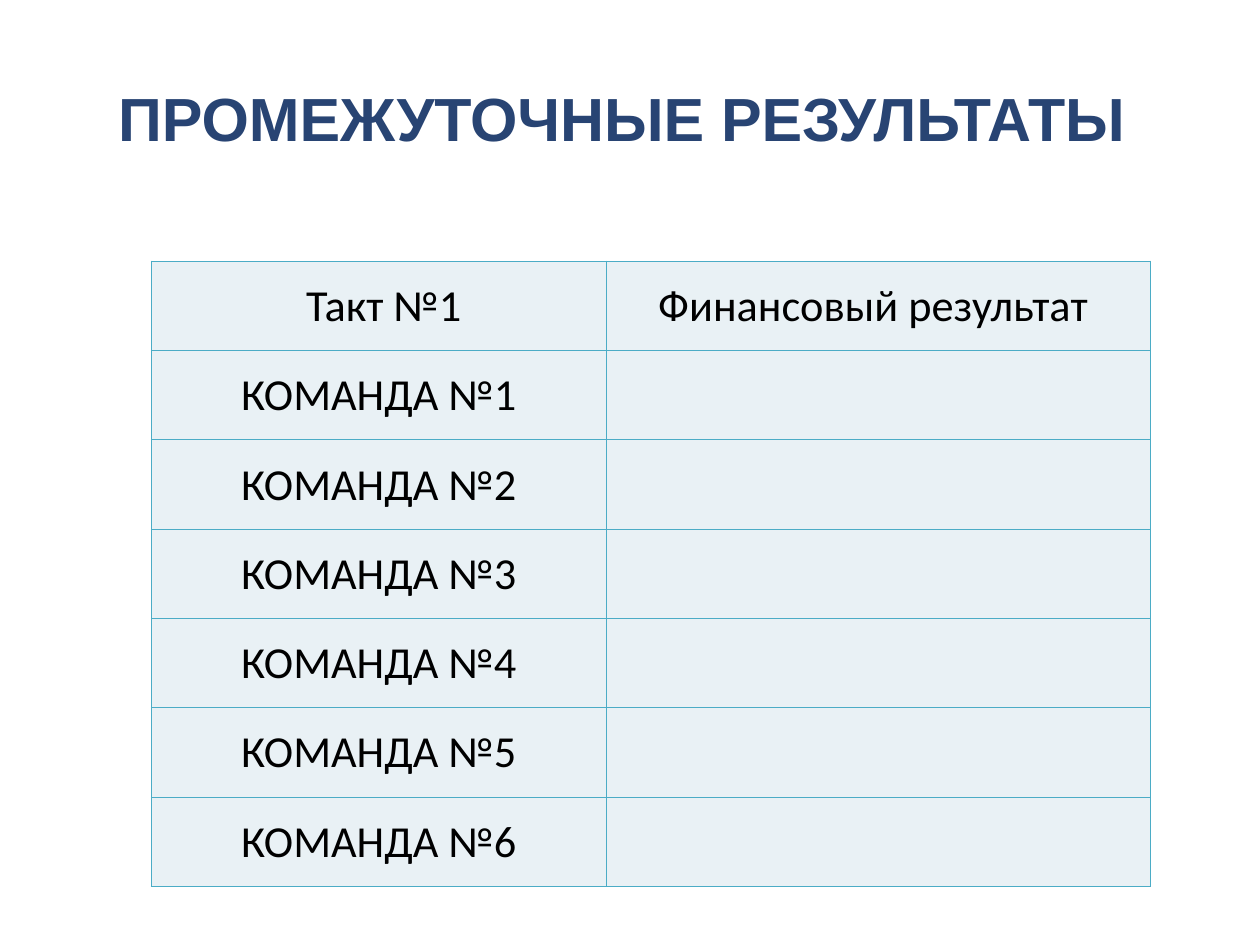
import pptx
import pptx.util
import pptx.dml.color
import pptx.enum.text
import pptx.oxml.ns
import lxml.etree

Inches = pptx.util.Inches
Pt = pptx.util.Pt
RGB = pptx.dml.color.RGBColor.from_string
qn = pptx.oxml.ns.qn
MIDDLE = pptx.enum.text.MSO_ANCHOR.MIDDLE
CENTER = pptx.enum.text.PP_ALIGN.CENTER
COLORS = {"title": "284473", "text": "000000", "fill": "E9F1F5", "line": "4BACC6"}


def write(frame, text, size=36, font="Calibri", color="text", bold=False):
    para = frame.paragraphs[0]
    para.alignment = CENTER
    run = para.add_run()
    run.text = text
    run.font.size = Pt(size)
    run.font.name = font
    run.font.bold = bold
    run.font.color.rgb = RGB(COLORS[color])


deck = pptx.Presentation()
deck.slide_width = Inches(14.22)
deck.slide_height = Inches(10.67)
slide = deck.slides.add_slide(deck.slide_layouts[5])

title = slide.shapes.title
title.left, title.top = Inches(0.71), Inches(0.43)
title.width, title.height = Inches(12.8), Inches(1.78)
frame = title.text_frame
frame.word_wrap = True
frame.auto_size = pptx.enum.text.MSO_AUTO_SIZE.NONE
frame.vertical_anchor = MIDDLE
frame.margin_left = frame.margin_right = Inches(0.14)
frame.margin_top = frame.margin_bottom = Inches(0.07)
write(frame, "ПРОМЕЖУТОЧНЫЕ РЕЗУЛЬТАТЫ ", size=49.5, font="Arial", color="title", bold=True)

rows = [(" Такт №1", "Финансовый результат ")]
rows += [(f"КОМАНДА №{num}", "") for num in range(1, 7)]
table = slide.shapes.add_table(
    len(rows), 2, Inches(1.71), Inches(2.95), Inches(11.27), Inches(7.06)
).table
for col, width in zip(table.columns, (5.13, 6.14)):
    col.width = Inches(width)

for y, row in enumerate(rows):
    for x, text in enumerate(row):
        cell = table.cell(y, x)
        cell.vertical_anchor = MIDDLE
        cell.margin_left = cell.margin_right = cell.margin_top = Inches(0.01)
        cell.margin_bottom = 0
        props = cell._tc.get_or_add_tcPr()
        for side in ("lnL", "lnR", "lnT", "lnB"):
            line = lxml.etree.SubElement(props, qn(f"a:{side}"), w=str(Pt(1)))
            paint = lxml.etree.SubElement(line, qn("a:solidFill"))
            lxml.etree.SubElement(paint, qn("a:srgbClr"), val=COLORS["line"])
        cell.fill.solid()
        cell.fill.fore_color.rgb = RGB(COLORS["fill"])
        if text:
            write(cell.text_frame, text)

deck.save("out.pptx")
